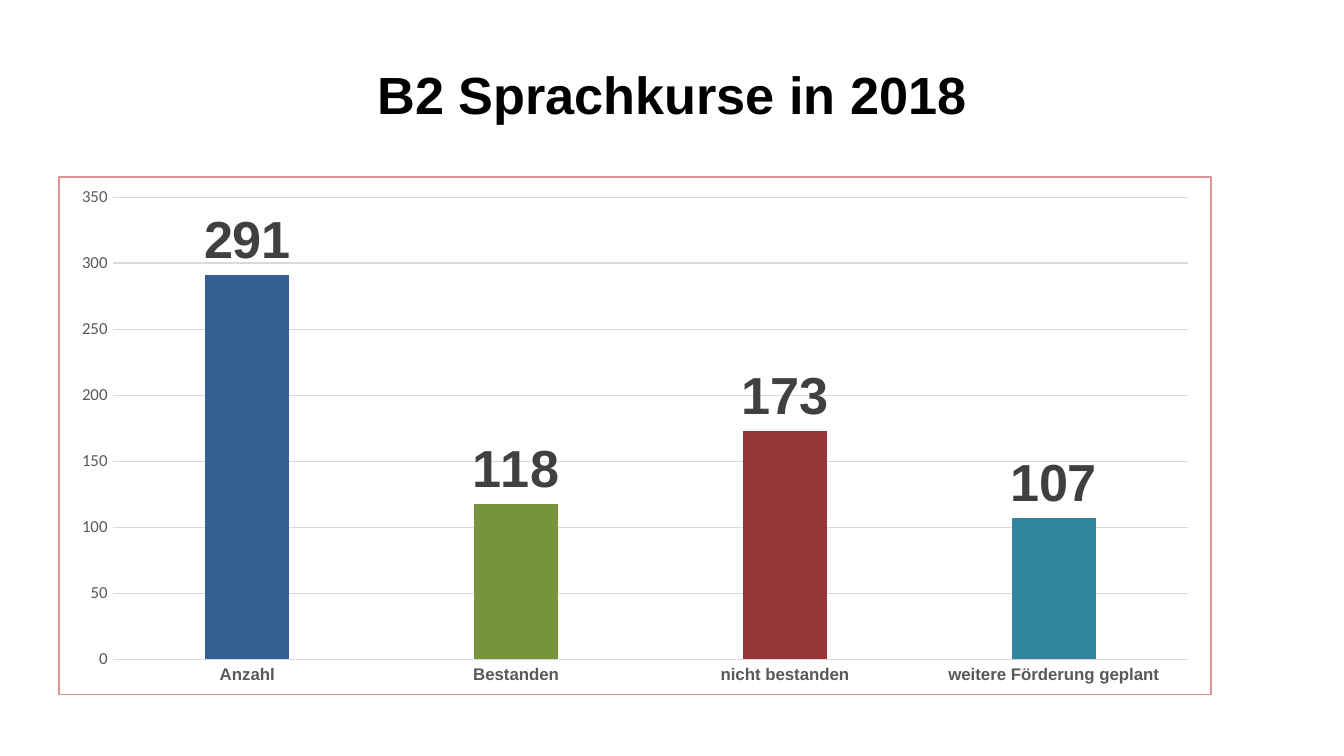
import pptx
import pptx.chart.data
import pptx.dml.color
import pptx.enum.chart
import pptx.enum.text
import pptx.oxml
import pptx.oxml.ns
import pptx.util

Pt = pptx.util.Pt
COLORS = {
    "black": "000000", "label": "404040", "axis": "595959",
    "grid": "D9D9D9", "frame": "D99694", "blue": "376092",
    "green": "77933C", "red": "953735", "teal": "31859C",
}
COURSES = [
    ("Anzahl", 291, "blue"),
    ("Bestanden", 118, "green"),
    ("nicht bestanden", 173, "red"),
    ("weitere Förderung geplant", 107, "teal"),
]


def tint(name):
    return pptx.dml.color.RGBColor.from_string(COLORS[name])


def style(font, size, color, name="Arial", bold=False):
    font.size = Pt(size)
    font.name = name
    font.bold = bold
    font.color.rgb = tint(color)


def add_text(slide, text, box, **form):
    frame = slide.shapes.add_textbox(*map(Pt, box)).text_frame
    frame.word_wrap = True
    frame.vertical_anchor = pptx.enum.text.MSO_ANCHOR.MIDDLE
    para = frame.paragraphs[0]
    para.alignment = pptx.enum.text.PP_ALIGN.CENTER
    run = para.add_run()
    run.text = text
    style(run.font, **form)


def rule(line, color):
    line.color.rgb = tint(color)
    line.width = Pt(0.75)


def add_frame(chart, color):
    ns = pptx.oxml.ns.nsdecls("c", "a")
    border = pptx.oxml.parse_xml(
        f'<c:spPr {ns}><a:noFill/><a:ln w="{Pt(0.75)}"><a:solidFill>'
        f'<a:srgbClr val="{COLORS[color]}"/></a:solidFill></a:ln></c:spPr>')
    chart.element.find(pptx.oxml.ns.qn("c:chart")).addnext(border)


def set_axes(chart):
    none = pptx.enum.chart.XL_TICK_MARK.NONE
    for axis in (chart.category_axis, chart.value_axis):
        axis.major_tick_mark = axis.minor_tick_mark = none
    cats, vals = chart.category_axis, chart.value_axis
    style(cats.tick_labels.font, 9, "axis", bold=True)
    rule(cats.format.line, "grid")
    style(vals.tick_labels.font, 9, "axis", name="Calibri")
    vals.format.line.fill.background()
    vals.has_major_gridlines = True
    rule(vals.major_gridlines.format.line, "grid")
    vals.minimum_scale, vals.maximum_scale, vals.major_unit = 0, 350, 50


def set_bars(plot):
    plot.gap_width, plot.overlap = 219, -27
    plot.vary_by_categories = False
    bars = plot.series[0]
    bars.invert_if_negative = False
    for i, (_, _, color) in enumerate(COURSES):
        fill = bars.points[i].format.fill
        fill.solid()
        fill.fore_color.rgb = tint(color)
    labels = bars.data_labels
    labels.show_value = True
    labels.position = pptx.enum.chart.XL_LABEL_POSITION.OUTSIDE_END
    style(labels.font, 28, "label", bold=True)


def add_bars(slide, box):
    names, values, _ = zip(*COURSES)
    data = pptx.chart.data.CategoryChartData()
    data.categories = names
    data.add_series("Series 1", values)
    kind = pptx.enum.chart.XL_CHART_TYPE.COLUMN_CLUSTERED
    chart = slide.shapes.add_chart(kind, *map(Pt, box), data).chart
    chart.has_legend = chart.has_title = False
    style(chart.font, 10, "black", name="Calibri")
    set_axes(chart)
    set_bars(chart.plots[0])
    add_frame(chart, "frame")


def main():
    deck = pptx.Presentation()
    deck.slide_width, deck.slide_height = Pt(720), Pt(405)
    slide = deck.slides.add_slide(deck.slide_layouts[6])
    add_text(slide, "B2 Sprachkurse in 2018", (36, 16.5, 648, 67.5),
             size=28, color="black", bold=True)
    add_bars(slide, (31.2, 94.5, 618, 278))
    deck.save("out.pptx")


if __name__ == "__main__":
    main()
